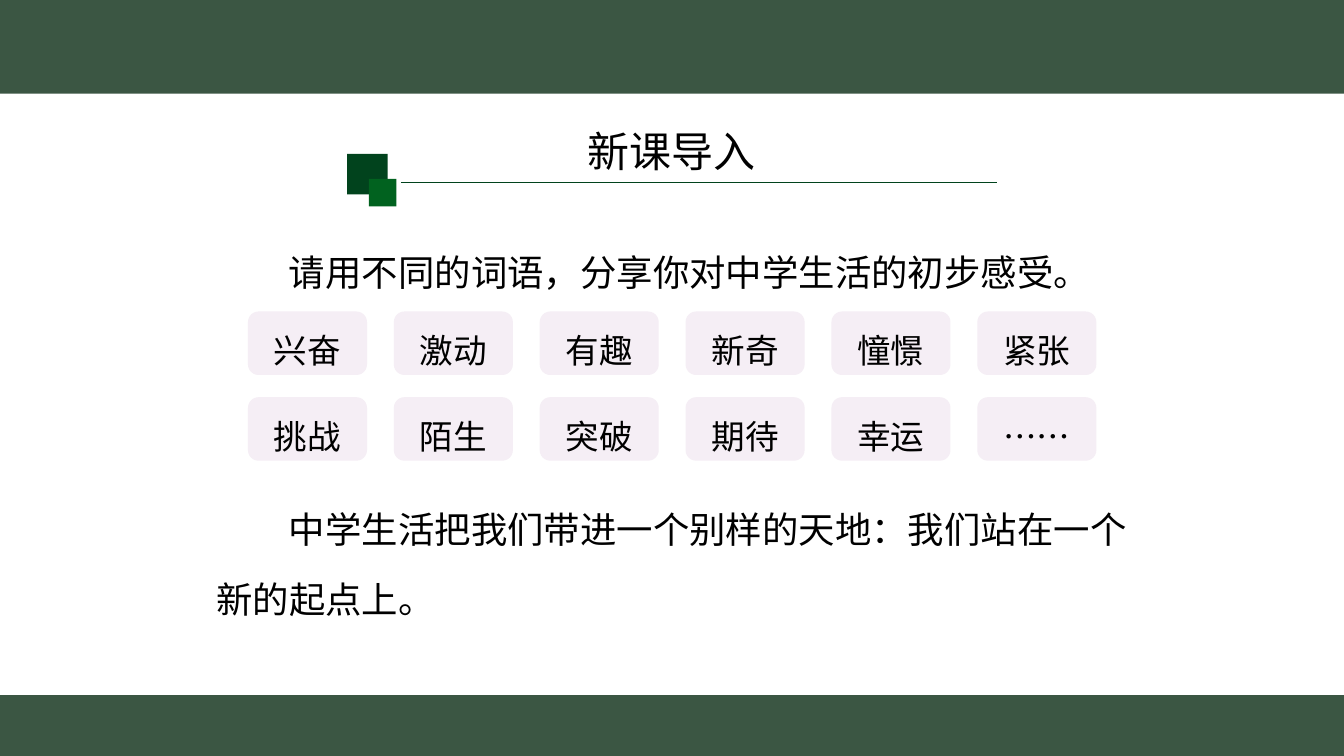
from lxml import etree
from pptx import Presentation
from pptx.dml.color import RGBColor
from pptx.enum.shapes import MSO_CONNECTOR as Connector, MSO_SHAPE as Preset
from pptx.enum.text import PP_ALIGN as Align
from pptx.oxml.ns import qn
from pptx.util import Cm, Pt

BAND_GREEN = RGBColor(0x3B, 0x56, 0x43)
DARK_GREEN = RGBColor(0x01, 0x43, 0x1D)
BRIGHT_GREEN = RGBColor(0x01, 0x62, 0x1F)
CARD_PINK = RGBColor(0xF5, 0xEE, 0xF5)
BLACK = RGBColor(0, 0, 0)
FONT = "Noto Sans CJK SC"
SLIDE_WIDTH, SLIDE_HEIGHT = 33.87, 19.05
WORDS = [
    ["兴奋", "激动", "有趣", "新奇", "憧憬", "紧张"],
    ["挑战", "陌生", "突破", "期待", "幸运", "……"],
]


def add_block(slide, preset, left, top, width, height, color):
    shape = slide.shapes.add_shape(preset, Cm(left), Cm(top), Cm(width), Cm(height))
    shape.shadow.inherit = False
    shape.fill.solid()
    shape.fill.fore_color.rgb = color
    shape.line.fill.background()
    return shape


def add_run(paragraph, text, size, line_spacing):
    paragraph.line_spacing = line_spacing
    run = paragraph.add_run()
    run.text = text
    run.font.size = Pt(size)
    run.font.name = FONT
    run.font.color.rgb = BLACK
    east_asian = etree.SubElement(run.font._element, qn("a:ea"))
    east_asian.set("typeface", FONT)


def add_text_frame(slide, left, top, width, height):
    box = slide.shapes.add_textbox(Cm(left), Cm(top), Cm(width), Cm(height))
    box.text_frame.word_wrap = True
    return box.text_frame


def add_bands(slide, top_height, bottom_height):
    for top, height in ((0, top_height), (SLIDE_HEIGHT - bottom_height, bottom_height)):
        add_block(slide, Preset.RECTANGLE, 0, top, SLIDE_WIDTH, height, BAND_GREEN)


def add_heading(slide, left, top, width, text):
    """Place two overlapping squares, a rule and a title centred on the slide."""
    rule_top = top + 0.72
    rule = slide.shapes.add_connector(
        Connector.STRAIGHT, Cm(left + 1.35), Cm(rule_top), Cm(left + width), Cm(rule_top))
    rule.line.color.rgb = DARK_GREEN
    rule.line.width = Pt(1)
    etree.SubElement(rule._element.spPr, qn("a:effectLst"))
    add_block(slide, Preset.RECTANGLE, left, top, 1.02, 1.02, DARK_GREEN)
    add_block(slide, Preset.RECTANGLE, left + 0.55, top + 0.63, 0.69, 0.69, BRIGHT_GREEN)

    title_width = 22.8
    frame = add_text_frame(
        slide, (SLIDE_WIDTH - title_width) / 2, top - 0.7, title_width, 1.6)
    frame.paragraphs[0].alignment = Align.CENTER
    add_run(frame.paragraphs[0], text, 30, 0.9)


def add_body(slide, left, top, width, height, lines):
    """Write lines of text, the first one indented by two characters."""
    size = 26
    frame = add_text_frame(slide, left, top, width, height)
    for index, line in enumerate(lines):
        paragraph = frame.add_paragraph() if index else frame.paragraphs[0]
        if index == 0:
            paragraph._p.get_or_add_pPr().set("indent", str(Pt(2 * size)))
        add_run(paragraph, line, size, 1.6)


def add_word_grid(slide, left, top, width, height):
    card_width, card_height = 3, 1.6
    column_step = (width - card_width) / (len(WORDS[0]) - 1)
    row_step = (height - card_height) / (len(WORDS) - 1)
    for row, words in enumerate(WORDS):
        for column, word in enumerate(words):
            card = add_block(
                slide, Preset.ROUNDED_RECTANGLE, left + column * column_step,
                top + row * row_step, card_width, card_height, CARD_PINK)
            frame = card.text_frame
            frame.vertical_anchor = 1
            frame.margin_top, frame.margin_bottom = Cm(0.18), Cm(0)
            frame.paragraphs[0].alignment = Align.CENTER
            add_run(frame.paragraphs[0], word, 24, 1.2)


def main():
    presentation = Presentation()
    presentation.slide_width = Cm(SLIDE_WIDTH)
    presentation.slide_height = Cm(SLIDE_HEIGHT)
    slide = presentation.slides.add_slide(presentation.slide_layouts[6])
    add_bands(slide, 2.36, 1.53)
    add_heading(slide, 8.75, 3.88, 16.38, "新课导入")
    add_body(slide, 5.2, 5.52, 28, 1.85, ["请用不同的词语，分享你对中学生活的初步感受。"])
    add_word_grid(slide, 6.25, 7.85, 21.38, 3.76)
    add_body(slide, 5.2, 12, 23.7, 3.64, [
        "中学生活把我们带进一个别样的天地：我们站在一个",
        "新的起点上。",
    ])
    presentation.save("out.pptx")


if __name__ == "__main__":
    main()
